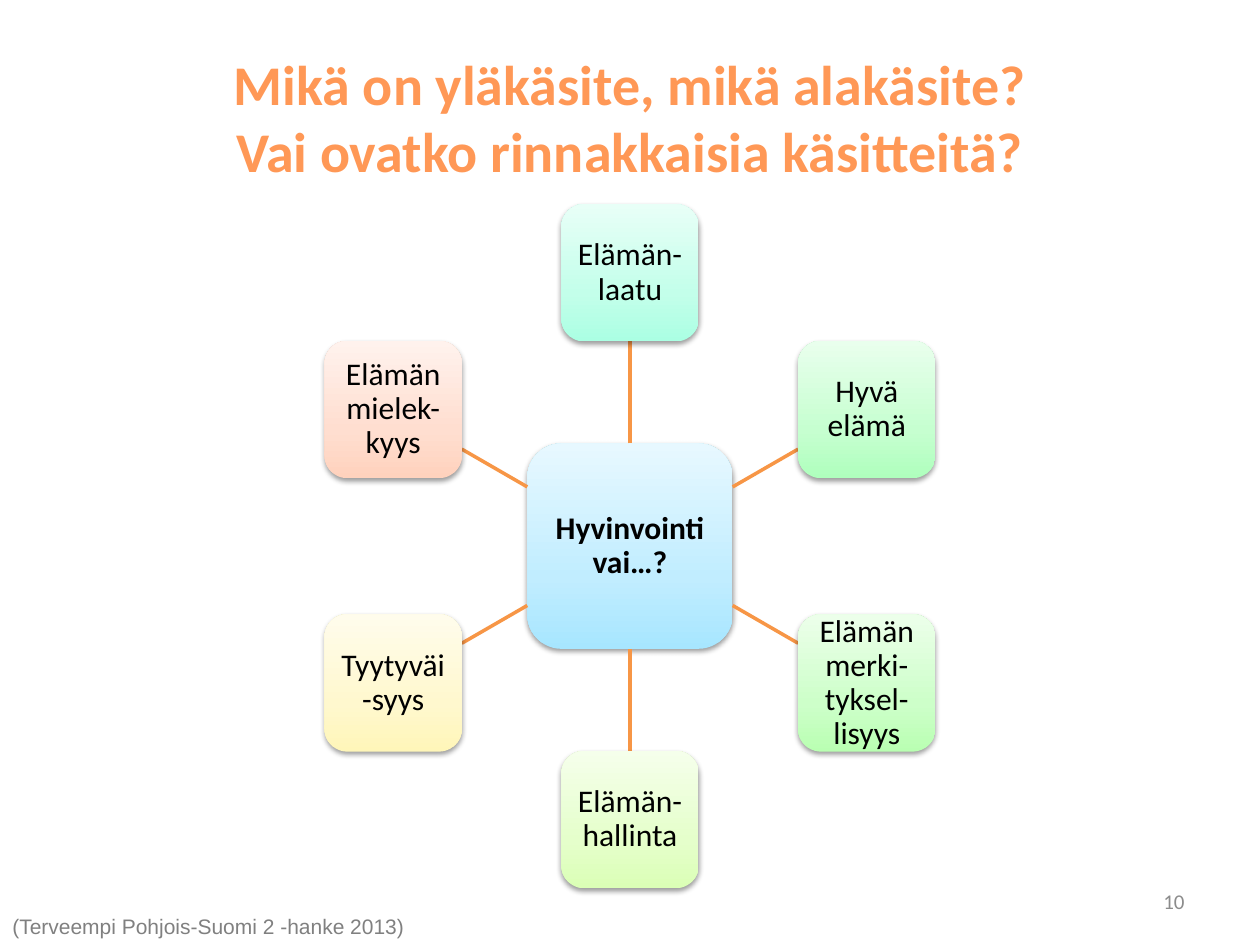
from math import cos, radians, sin

from pptx import Presentation
from pptx.dml.color import RGBColor
from pptx.enum.shapes import MSO_CONNECTOR, MSO_SHAPE
from pptx.enum.text import MSO_ANCHOR, PP_ALIGN
from pptx.oxml import parse_xml
from pptx.oxml.ns import nsdecls
from pptx.util import Inches, Pt

LEFT, CENTER, RIGHT = PP_ALIGN.LEFT, PP_ALIGN.CENTER, PP_ALIGN.RIGHT
TOP, MIDDLE = MSO_ANCHOR.TOP, MSO_ANCHOR.MIDDLE
ROUNDED, STRAIGHT = MSO_SHAPE.ROUNDED_RECTANGLE, MSO_CONNECTOR.STRAIGHT
TITLE_ONLY = 5

COLORS = {"title": "FF9856", "text": "000000", "spoke": "F79646",
          "number": "8C8C8C", "source": "808080"}

# Gradient stops from the bottom of a box to its top
STOPS = (0, 35, 100)
HUB = ("Hyvinvointi vai…?", ("A7E6FF", "C1EDFF", "E7F8FF"))
# Concepts clockwise from the top
CONCEPTS = [
    ("Elämän-laatu", ("ABFFE3", "C3FFEA", "E8FFF7")),
    ("Hyvä elämä", ("AFFFBD", "C6FFD0", "E9FFED")),
    ("Elämän merki-tyksel-lisyys", ("B9FFB2", "CDFFC9", "ECFFEA")),
    ("Elämän-hallinta", ("DBFFB6", "E5FFCB", "F5FFEB")),
    ("Tyytyväi-syys", ("FFF6B9", "FFF8CE", "FFFCEC")),
    ("Elämän mielek-kyys", ("FFD2BD", "FFDED0", "FFF2ED")),
]


def write(shape, text, color, align=CENTER, anchor=MIDDLE, spacing=None, **font):
    frame = shape.text_frame
    frame.text = text
    frame.word_wrap = True
    frame.vertical_anchor = anchor
    paragraph = frame.paragraphs[0]
    paragraph.alignment = align
    paragraph.line_spacing = spacing
    for name, value in {"name": "Calibri", "bold": False, **font}.items():
        setattr(paragraph.font, name, value)
    paragraph.font.color.rgb = RGBColor.from_string(COLORS[color])


def add_title(slide, box):
    title = slide.shapes.title
    title.left, title.top, title.width, title.height = map(Inches, box)
    write(title, "Mikä on yläkäsite, mikä alakäsite?\vVai ovatko rinnakkaisia käsitteitä?",
          "title", size=Pt(32), bold=True)


def add_concept(slide, x, y, side, concept, bold=False):
    """Rounded square centred on x, y with a gradient and a soft shadow."""
    text, tints = concept
    square = slide.shapes.add_shape(ROUNDED, Inches(x - side / 2), Inches(y - side / 2),
                                    Inches(side), Inches(side))
    square.line.fill.background()
    square.fill.background()
    properties = square._element.spPr
    stops = "".join(f'<a:gs pos="{stop * 1000}"><a:srgbClr val="{tint}"/></a:gs>'
                    for stop, tint in zip(STOPS, tints))
    properties.replace(properties.find("{*}noFill"), parse_xml(
        f'<a:gradFill {nsdecls("a")} rotWithShape="1"><a:gsLst>{stops}</a:gsLst>'
        '<a:lin ang="16200000" scaled="1"/></a:gradFill>'))
    properties.append(parse_xml(
        f'<a:effectLst {nsdecls("a")}><a:outerShdw blurRad="{Pt(3.1)}" dist="{Pt(1.6)}" '
        'dir="5400000" rotWithShape="0"><a:srgbClr val="000000">'
        '<a:alpha val="38000"/></a:srgbClr></a:outerShdw></a:effectLst>'))
    for edge in ("left", "top", "right", "bottom"):
        setattr(square.text_frame, f"margin_{edge}", Inches(0.05))
    write(square, text, "text", spacing=0.9, size=Pt(18), bold=bold)


def add_spoke(slide, x1, y1, x2, y2):
    spoke = slide.shapes.add_connector(STRAIGHT, *map(Inches, (x1, y1, x2, y2)))
    spoke.line.color.rgb = RGBColor.from_string(COLORS["spoke"])
    spoke.line.width = Pt(2)
    spoke._element.spPr.append(parse_xml(f'<a:effectLst {nsdecls("a")}/>'))


def add_radial(slide, box):
    """Hub in the middle of the box, concepts on a circle around it."""
    left, top, width, height = box
    center_x, center_y = left + width / 2, top + height / 2
    hub_side, concept_side = 1.63, 1.09
    radius = (height - concept_side) / 2
    add_concept(slide, center_x, center_y, hub_side, HUB, bold=True)
    for index, concept in enumerate(CONCEPTS):
        angle = radians(360 / len(CONCEPTS) * index)
        dx, dy = sin(angle), -cos(angle)
        # A ray leaves a square where its longer component meets the side
        reach = max(abs(dx), abs(dy))
        start = hub_side / 2 / reach
        end = radius - concept_side / 2 / reach
        add_spoke(slide, center_x + start * dx, center_y + start * dy,
                  center_x + end * dx, center_y + end * dy)
        add_concept(slide, center_x + radius * dx, center_y + radius * dy,
                    concept_side, concept)


def add_note(slide, box, text, color, **style):
    note = slide.shapes.add_textbox(*map(Inches, box))
    write(note, text, color, size=Pt(12), **style)


def main():
    deck = Presentation()
    deck.slide_width, deck.slide_height = Inches(10), Inches(7.5)
    slide = deck.slides.add_slide(deck.slide_layouts[TITLE_ONLY])
    add_title(slide, (0.5, 0.3, 9, 1.25))
    add_radial(slide, (2.58, 1.62, 4.84, 5.43))
    # Slide number and source
    add_note(slide, (7.17, 6.95, 2.33, 0.4), "10", "number", align=RIGHT)
    add_note(slide, (0, 7.2, 5.47, 0.3), "(Terveempi Pohjois-Suomi 2 -hanke 2013)",
             "source", align=LEFT, anchor=TOP, name="Arial")
    deck.save("out.pptx")


if __name__ == "__main__":
    main()
